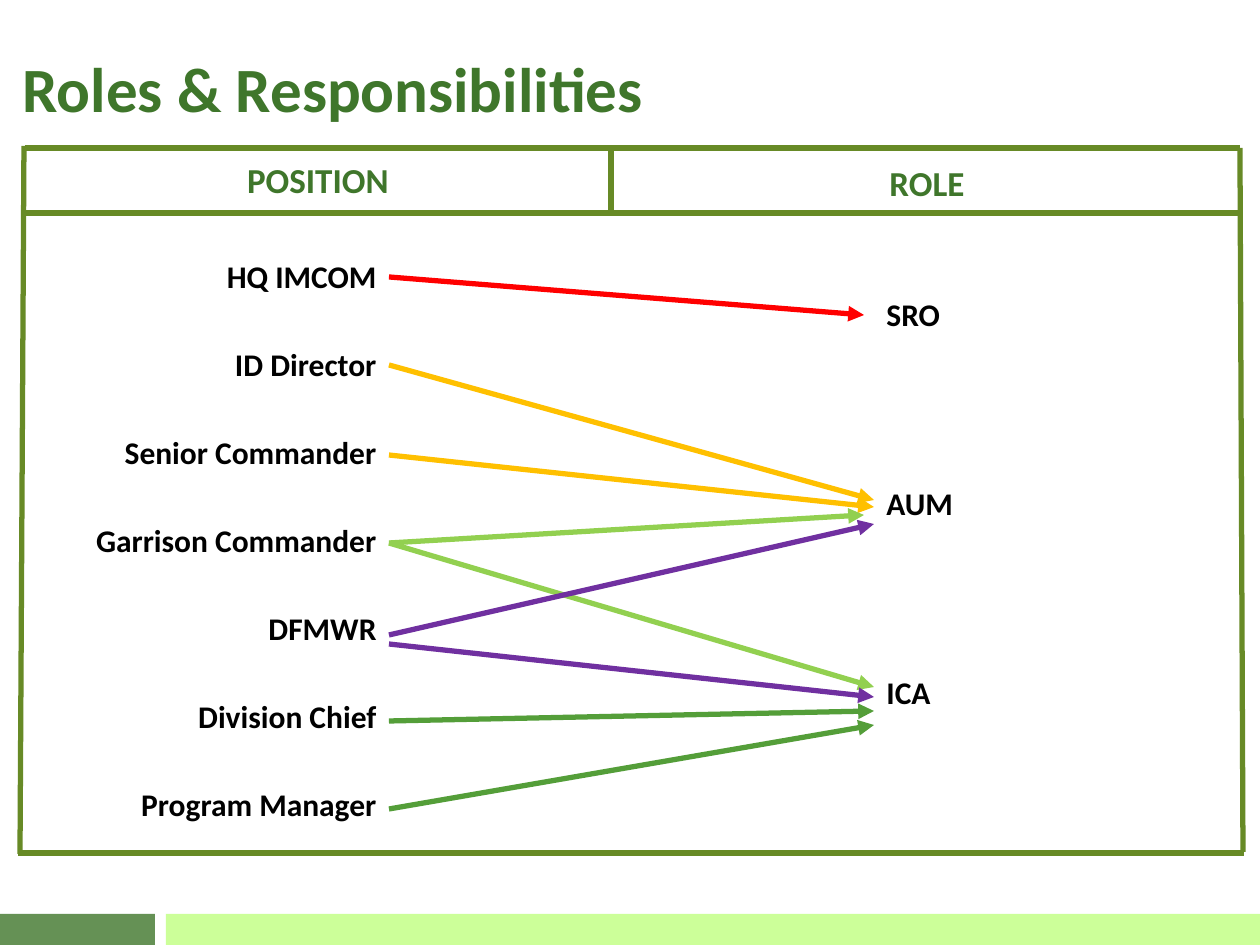
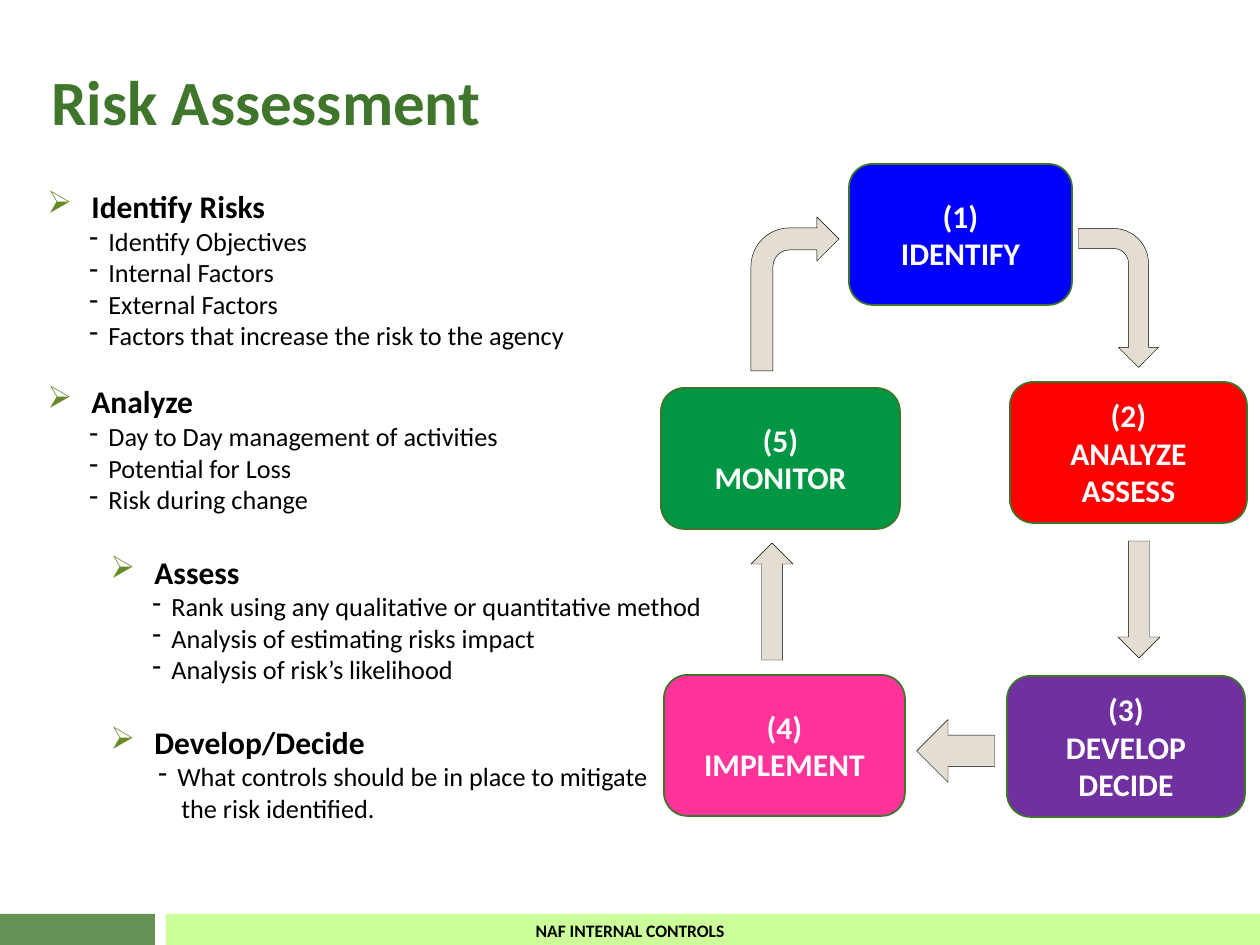
from lxml import etree
from pptx import Presentation
from pptx import util as u
from pptx.dml.color import RGBColor
from pptx.enum import shapes, text
from pptx.oxml.ns import qn

PX = 914400 / 126
FOREST = RGBColor(0x3F, 0x76, 0x2B)
OLIVE = RGBColor(0x67, 0x8A, 0x26)
LIME = RGBColor(0xCC, 0xFF, 0x99)
EDGE = RGBColor(0x3E, 0x75, 0x2A)
BLACK = RGBColor(0, 0, 0)
WHITE = RGBColor(0xFF, 0xFF, 0xFF)
BLUE = RGBColor(0, 0, 0xFF)
RED = RGBColor(0xFF, 0, 0)
GREEN = RGBColor(0, 0x96, 0x44)
PURPLE = RGBColor(0x70, 0x30, 0xA0)
PINK = RGBColor(0xFF, 0x33, 0x99)
AMBER = RGBColor(0xFF, 0xC0, 0)
LIGHT_GREEN = RGBColor(0x92, 0xD0, 0x50)
LEAF = RGBColor(0x54, 0x9E, 0x39)
SAND = RGBColor(0xE3, 0xDE, 0xD1)

SHAPE = shapes.MSO_SHAPE
LEFT, CENTER, RIGHT = text.PP_ALIGN.LEFT, text.PP_ALIGN.CENTER, text.PP_ALIGN.RIGHT
TOP, MIDDLE, BOTTOM = text.MSO_ANCHOR.TOP, text.MSO_ANCHOR.MIDDLE, text.MSO_ANCHOR.BOTTOM


def px(n):
    return u.Emu(round(n * PX))


def apply(target, values):
    for name, value in values.items():
        setattr(target, name, value)


class Deck:
    def __init__(self):
        self.prs = Presentation()
        apply(self.prs, {"slide_width": px(1260), "slide_height": px(945)})
        self.s = None

    def slide(self, title, at):
        self.s = self.prs.slides.add_slide(self.prs.slide_layouts[5])
        band = self.shape(SHAPE.RECTANGLE, (0, 914, 155, 31), FOREST)
        color = band._element.spPr.find(".//" + qn("a:srgbClr"))
        etree.SubElement(color, qn("a:alpha"), val="80000")
        self.shape(SHAPE.RECTANGLE, (166, 914, 1094, 31), LIME)
        sp = self.s.shapes.title
        apply(sp, dict(zip(("left", "top", "width", "height"), map(px, at))))
        self.paragraphs(sp.text_frame, [title], 36, FOREST, anchor=BOTTOM)

    def paragraph(self, tf, i, words, size, color, bold=True, align=LEFT, gap=0):
        p = tf.paragraphs[0] if i == 0 else tf.add_paragraph()
        apply(p, {"alignment": align, "space_before": u.Pt(gap if i else 0)})
        r = p.add_run()
        r.text = words
        apply(r.font, {"name": "Calibri", "size": u.Pt(size), "bold": bold})
        r.font.color.rgb = color
        return p

    def frame(self, tf, anchor=TOP):
        apply(tf, {"word_wrap": True, "auto_size": text.MSO_AUTO_SIZE.NONE,
                   "vertical_anchor": anchor})

    def paragraphs(self, tf, lines, size, color, align=LEFT, anchor=TOP, gap=0):
        self.frame(tf, anchor)
        for i, words in enumerate(lines):
            self.paragraph(tf, i, words, size, color, True, align, gap)

    def text(self, at, lines, size, color=BLACK, align=LEFT, gap=0):
        sp = self.s.shapes.add_textbox(*map(px, at))
        self.paragraphs(sp.text_frame, lines, size, color, align, gap=gap)

    def outline(self, at, items):
        tf = self.s.shapes.add_textbox(*map(px, at)).text_frame
        self.frame(tf)
        for i, (words, size, margin, hang, bullet, gap) in enumerate(items):
            p = self.paragraph(tf, i, words, size, BLACK, size == 18, gap=gap)
            pPr = p._p.get_or_add_pPr()
            pPr.set("marL", str(px(margin)))
            pPr.set("indent", str(px(-hang)))
            if bullet:
                color = OLIVE if bullet == "➢" else BLACK
                buClr = etree.SubElement(pPr, qn("a:buClr"))
                etree.SubElement(buClr, qn("a:srgbClr"), val=str(color))
                etree.SubElement(pPr, qn("a:buChar"), char=bullet)

    def shape(self, kind, at, fill, line=None, width=1, turn=0, lines=()):
        sp = self.s.shapes.add_shape(kind, *map(px, at))
        sp.shadow.inherit = False
        sp.rotation = turn
        sp.fill.solid()
        sp.fill.fore_color.rgb = fill
        if line is None:
            sp.line.fill.background()
        else:
            sp.line.color.rgb = line
            sp.line.width = u.Pt(width)
        if lines:
            self.paragraphs(sp.text_frame, lines, 18, WHITE, CENTER, MIDDLE)
        return sp

    def line(self, ends, color, arrow=False):
        c = self.s.shapes.add_connector(shapes.MSO_CONNECTOR.STRAIGHT, *map(px, ends))
        c.line.color.rgb = color
        c.line.width = u.Pt(3)
        if arrow:
            ln = c._element.spPr.find(qn("a:ln"))
            etree.SubElement(ln, qn("a:tailEnd"), type="triangle")
        etree.SubElement(c._element.spPr, qn("a:effectLst"))


def roles(deck):
    deck.slide("Roles & Responsibilities", (10, 39, 1250, 92))
    for ends in [(24, 213, 1240, 213), (25, 148, 1240, 148), (24, 146, 20, 854),
                 (1240, 148, 1243, 852), (611, 150, 611, 214), (18, 853, 1244, 853)]:
        deck.line(ends, OLIVE)
    deck.text((12, 152, 612, 55), ["POSITION"], 20, FOREST, CENTER)
    deck.text((620, 155, 614, 55), ["ROLE"], 20, FOREST, CENTER)
    deck.text((14, 251, 375, 586),
              ["HQ IMCOM", "ID Director", "Senior Commander", "Garrison Commander",
               "DFMWR", "Division Chief", "Program Manager"], 18, align=RIGHT, gap=28.7)
    deck.text((874, 289, 362, 509), ["SRO", "AUM", "ICA"], 18, gap=86.2)
    for y, x_end, y_end, color in [
            (277, 864, 315, RED), (365, 874, 500, AMBER), (455, 874, 507, AMBER),
            (543, 864, 515, LIGHT_GREEN), (543, 874, 687, LIGHT_GREEN),
            (635, 874, 524, PURPLE), (644, 874, 697, PURPLE),
            (721, 874, 711, LEAF), (809, 874, 725, LEAF)]:
        deck.line((389, y, x_end, y_end), color, True)


def risks(deck):
    deck.slide("Risk Assessment", (39, 52, 1138, 92))
    topics = [
        ("Identify Risks", 0, 0, 0,
         ["Identify Objectives", "Internal Factors", "External Factors",
          "Factors that increase the risk to the agency"]),
        ("Analyze", 0, 0, 18,
         ["Day to Day management of activities", "Potential for Loss",
          "Risk during change"]),
        ("Assess", 63, 63, 21.6,
         ["Rank using any qualitative or quantitative method",
          "Analysis of estimating risks impact", "Analysis of risk’s likelihood"]),
        ("Develop/Decide", 63, 69, 21.6,
         ["What controls should be in place to mitigate"])]
    items = []
    for heading, shift, inner, gap, points in topics:
        items.append((heading, 18, 44 + shift, 44, "➢", gap))
        items += [(point, 15, 61 + inner, 19, "-", 0) for point in points]
    items.append(("the risk identified.", 15, 134, 0, None, 0))
    deck.outline((35, 181, 858, 655), items)

    for at, fill, lines in [
            ((849, 164, 223, 141), BLUE, ["(1)", "IDENTIFY"]),
            ((1010, 382, 237, 141), RED, ["(2)", "ANALYZE", "ASSESS"]),
            ((661, 388, 239, 141), GREEN, ["(5)", "MONITOR"]),
            ((1007, 676, 238, 141), PURPLE, ["(3)", "DEVELOP", "DECIDE"]),
            ((664, 675, 241, 141), PINK, ["(4)", "IMPLEMENT"])]:
        deck.shape(SHAPE.ROUNDED_RECTANGLE, at, fill, EDGE, lines=lines)
    for kind, at, turn in [
            (SHAPE.BENT_ARROW, (1049, 258, 139, 80), 90),
            (SHAPE.DOWN_ARROW, (1118, 541, 42, 117), 0),
            (SHAPE.DOWN_ARROW, (924, 712, 63, 78), 90),
            (SHAPE.DOWN_ARROW, (751, 543, 42, 117), 180),
            (SHAPE.BENT_ARROW, (751, 217, 88, 154), 0)]:
        deck.shape(kind, at, SAND, BLACK, 0.25, turn)
    deck.text((0, 914, 1260, 31), ["NAF INTERNAL CONTROLS"], 10, align=CENTER)


def main():
    deck = Deck()
    roles(deck)
    risks(deck)
    deck.prs.save("out.pptx")


if __name__ == "__main__":
    main()
